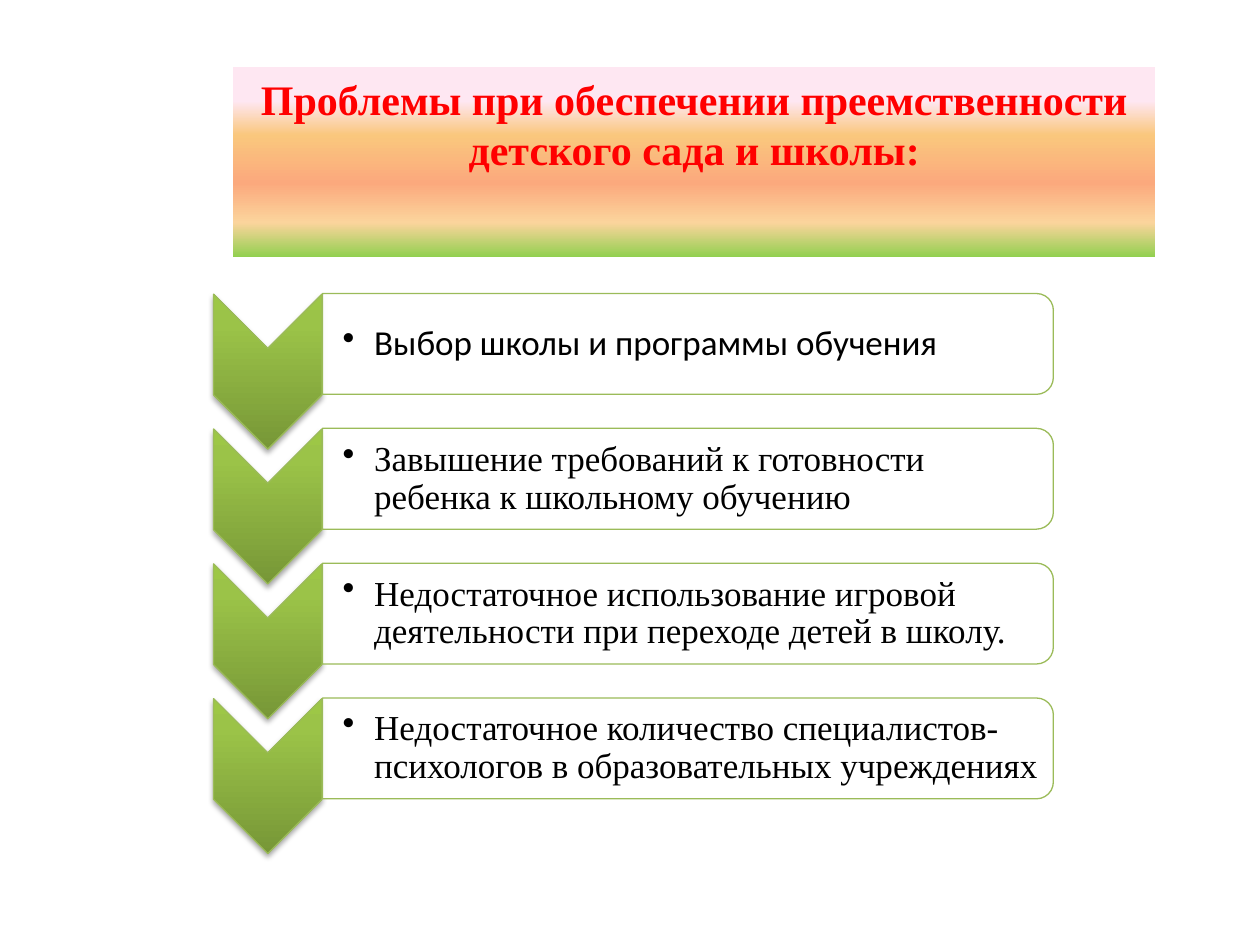
from dataclasses import dataclass

from lxml.etree import SubElement
from pptx import Presentation
from pptx.dml.color import RGBColor
from pptx.enum.shapes import MSO_SHAPE
from pptx.enum.text import MSO_ANCHOR, MSO_AUTO_SIZE, PP_ALIGN
from pptx.oxml import parse_xml
from pptx.oxml.ns import nsdecls, qn
from pptx.util import Inches, Pt

SERIF = "Times New Roman"
GREEN = "9BBB59"
FIRST_TOP = 2.52
ROW_PITCH = 1.07
TITLE_STOPS = [(18, "FEE7F2"), (36, "FAC77D"), (61, "FBA97D"), (82, "FBD49C"), (100, "92D050")]
CHEVRON_STOPS = [(0, "779737"), (80, "9BC348"), (100, "9DC746")]


@dataclass
class Problem:
    text: str
    font: str = SERIF


PROBLEMS = [
    Problem("Выбор школы и программы обучения", "Calibri"),
    Problem("Завышение требований к готовности ребенка к школьному обучению"),
    Problem("Недостаточное использование игровой деятельности при переходе детей в школу."),
    Problem("Недостаточное количество специалистов-психологов в образовательных учреждениях"),
]


def rgb(color: str) -> RGBColor:
    return RGBColor.from_string(color)


def fill_gradient(sp, stops: list, angle: int) -> None:
    sp.fill.gradient()
    old = sp._element.spPr.find(qn("a:gradFill"))
    stop_xml = "".join(
        f'<a:gs pos="{pos * 1000}"><a:srgbClr val="{color}"/></a:gs>' for pos, color in stops
    )
    new = parse_xml(
        f'<a:gradFill {nsdecls("a")} rotWithShape="0"><a:gsLst>{stop_xml}</a:gsLst>'
        f'<a:lin ang="{angle * 60000}" scaled="0"/></a:gradFill>'
    )
    old.getparent().replace(old, new)


def add_shadow(sp) -> None:
    sp._element.spPr.append(parse_xml(
        f'<a:effectLst {nsdecls("a")}><a:outerShdw blurRad="{Pt(3.1)}" dist="{Pt(1.8)}" '
        'dir="5400000" rotWithShape="0"><a:srgbClr val="000000"><a:alpha val="35000"/>'
        "</a:srgbClr></a:outerShdw></a:effectLst>"
    ))


def write_text(sp, text: str, *, font: str = SERIF, size: int = 20, color: str = "000000",
               bold: bool = False, align=PP_ALIGN.LEFT, anchor=MSO_ANCHOR.MIDDLE,
               spacing: float = 1.0, bullet: bool = False) -> None:
    tf = sp.text_frame
    tf.word_wrap = True
    tf.auto_size = MSO_AUTO_SIZE.NONE
    tf.vertical_anchor = anchor
    p = tf.paragraphs[0]
    p.alignment = align
    p.line_spacing = spacing
    if bullet:
        pPr = p._p.get_or_add_pPr()
        pPr.set("marL", str(Inches(0.25)))
        pPr.set("indent", str(-Inches(0.25)))
        SubElement(pPr, qn("a:buChar"), char="•")
    r = p.add_run()
    r.text = text
    r.font.name = font
    r.font.size = Pt(size)
    r.font.bold = bold
    r.font.color.rgb = rgb(color)


def add_outlined(shapes, kind, left: float, top: float, width: float, height: float):
    sp = shapes.add_shape(kind, Inches(left), Inches(top), Inches(width), Inches(height))
    sp.rotation = 90
    sp.line.color.rgb = rgb(GREEN)
    sp.line.width = Pt(0.75)
    return sp


def add_problem(shapes, problem: Problem, top: float) -> None:
    chevron = add_outlined(shapes, MSO_SHAPE.CHEVRON, 1.51, top, 1.23, 0.86)
    fill_gradient(chevron, CHEVRON_STOPS, 270)
    add_shadow(chevron)

    panel = add_outlined(shapes, MSO_SHAPE.ROUND_2_SAME_RECTANGLE, 5.06, top - 2.69, 0.8, 5.8)
    panel.shadow.inherit = False
    panel.fill.solid()
    panel.fill.fore_color.rgb = rgb("FFFFFF")
    white = panel._element.spPr.find(qn("a:solidFill"))[0]
    SubElement(white, qn("a:alpha"), val="90000")

    label = shapes.add_textbox(Inches(2.56), Inches(top - 0.15), Inches(5.76), Inches(0.72))
    tf = label.text_frame
    tf.margin_left = Inches(0.16)
    tf.margin_top = tf.margin_right = tf.margin_bottom = Inches(0.01)
    write_text(label, problem.text, font=problem.font, spacing=0.9, bullet=True)


def main() -> None:
    prs = Presentation()
    prs.slide_width = Inches(10)
    prs.slide_height = Inches(7.5)
    s = prs.slides.add_slide(prs.slide_layouts[5])

    title = s.shapes.title
    title.left, title.top = Inches(1.85), Inches(0.53)
    title.width, title.height = Inches(7.32), Inches(1.51)
    fill_gradient(title, TITLE_STOPS, 90)
    write_text(title, "Проблемы при обеспечении преемственности детского сада и школы:",
               size=24, color="FF0000", bold=True, align=PP_ALIGN.CENTER, anchor=MSO_ANCHOR.TOP)

    group = s.shapes.add_group_shape()
    for i, problem in enumerate(PROBLEMS):
        add_problem(group.shapes, problem, FIRST_TOP + i * ROW_PITCH)

    prs.save("out.pptx")


if __name__ == "__main__":
    main()
